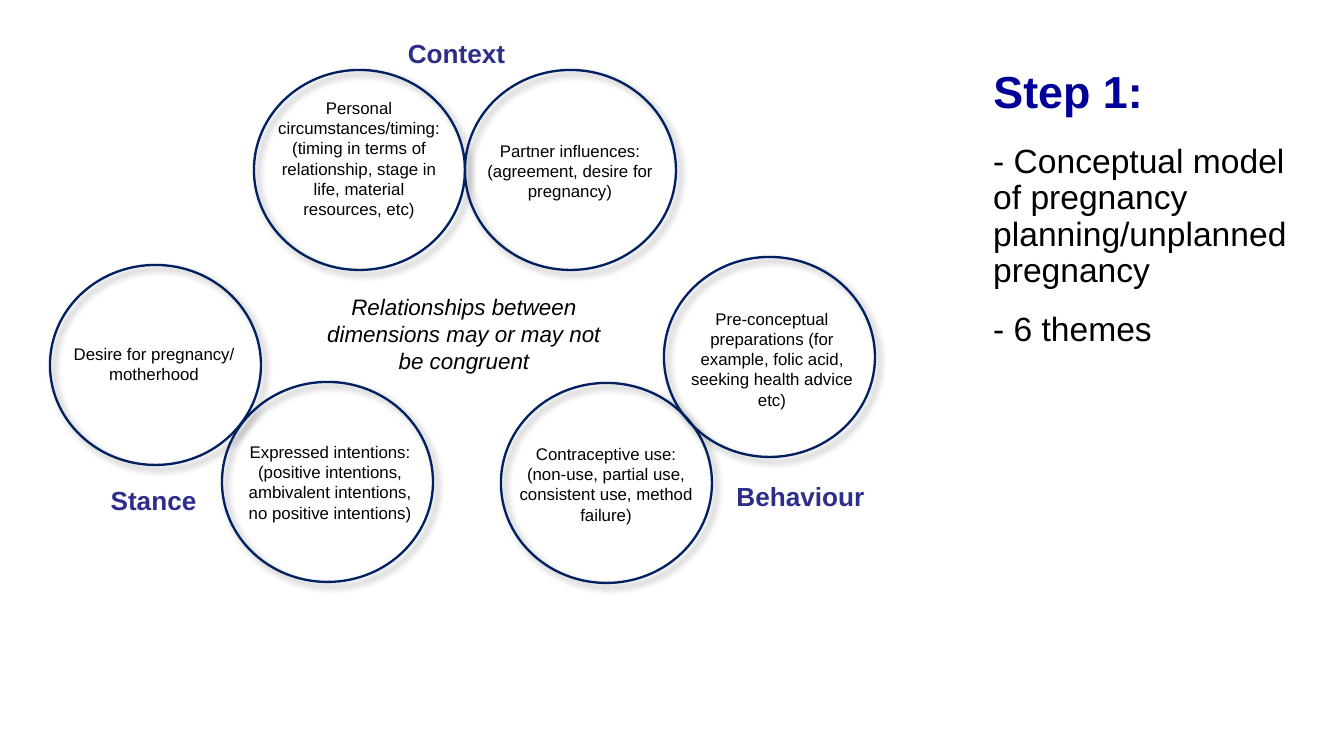
from lxml import etree
from pptx import Presentation
from pptx.dml.color import RGBColor
from pptx.enum.shapes import MSO_SHAPE
from pptx.enum.text import MSO_ANCHOR, MSO_AUTO_SIZE, PP_ALIGN
from pptx.util import Pt

OVAL = MSO_SHAPE.OVAL
TOP = MSO_ANCHOR.TOP
FIXED = MSO_AUTO_SIZE.NONE
LEFT, MID = PP_ALIGN.LEFT, PP_ALIGN.CENTER
SCALE = 914400 / 134.4
COLORS = {"title": "000099", "label": "2D2D8A", "ring": "002060", "text": "000000"}
NS = "http://schemas.openxmlformats.org/drawingml/2006/main"
SHADOW = f"""<a:effectLst xmlns:a="{NS}">
<a:outerShdw blurRad="50800" dist="38100" dir="2700000" algn="tl" rotWithShape="0">
<a:srgbClr val="000000"><a:alpha val="40000"/></a:srgbClr>
</a:outerShdw></a:effectLst>"""


def px(*sizes):
    """Turn pixel lengths into EMU."""
    return [round(size * SCALE) for size in sizes]


class Board:
    """Holds the slide and its style, and adds each kind of element."""

    def __init__(self, deck):
        self.slide = deck.slides.add_slide(deck.slide_layouts[5])
        self.shapes = self.slide.shapes
        self.font = "Arial"

    def style(self, frame, lines, size, color, align, bold=False, italic=False):
        """Fill a text frame with styled paragraphs."""
        frame.word_wrap = True
        frame.auto_size = FIXED
        frame.vertical_anchor = TOP
        frame.text = "\n".join(lines)
        for para in frame.paragraphs:
            para.alignment = align
            font = para.font
            font.name, font.size = self.font, Pt(size)
            font.bold, font.italic = bold, italic
            font.color.rgb = RGBColor.from_string(COLORS[color])

    def title(self, box, text):
        """Place and style the slide title."""
        shape = self.shapes.title
        shape.left, shape.top, shape.width, shape.height = px(*box)
        self.style(shape.text_frame, [text], 24, "title", LEFT, bold=True)
        para = shape.text_frame.paragraphs[0]
        para.line_spacing, para.space_before = 0.9, Pt(0)

    def text(self, box, lines, size, color="text", align=MID, **looks):
        """Add a text box and return its frame."""
        frame = self.shapes.add_textbox(*px(*box)).text_frame
        self.style(frame, lines, size, color, align, **looks)
        return frame

    def notes(self, box, lines):
        """Add the spaced list beside the model."""
        for para in self.text(box, lines, 18, align=LEFT).paragraphs:
            para.line_spacing, para.space_after = 0.9, Pt(12)

    def ring(self, left, top):
        """Add an unfilled circle with a soft shadow."""
        shape = self.shapes.add_shape(OVAL, *px(left, top, 211, 200))
        shape.fill.background()
        shape.line.color.rgb = RGBColor.from_string(COLORS["ring"])
        shape.line.width = Pt(1.25)
        shape._element.spPr.append(etree.fromstring(SHADOW))


RINGS = [(254, 70), (465, 70), (501, 383), (664, 257), (50, 265), (222, 382)]
LABELS = [("Context", 366, 31), ("Stance", 63, 478), ("Behaviour", 710, 474)]
THEMES = [
    ((259, 91, 200, 136), ["Personal circumstances/timing: (timing in terms of "
                           "relationship, stage in life, material resources, etc)"]),
    ((470, 134, 200, 75), ["Partner influences: (agreement, desire for pregnancy)"]),
    ((54, 337, 200, 54), ["Desire for pregnancy/", "motherhood"]),
    ((230, 435, 200, 95), ["Expressed intentions: (positive intentions, "
                           "ambivalent intentions, no positive intentions)"]),
    ((506, 437, 200, 95), ["Contraceptive use: (non-use, partial use, "
                           "consistent use, method failure)"]),
    ((664, 302, 216, 116), ["Pre-conceptual preparations (for example, "
                            "folic acid, seeking health advice etc)"]),
]


def main():
    """Build and save the slide."""
    deck = Presentation()
    deck.slide_width, deck.slide_height = px(1344, 756)
    board = Board(deck)
    board.title((980, 63, 340, 95), "Step 1:")
    board.notes((980, 138, 352, 370), [
        "- Conceptual model of pregnancy planning/unplanned pregnancy", "- 6 themes"])
    for spot in RINGS:
        board.ring(*spot)
    for name, left, top in LABELS:
        board.text((left, top, 181, 46), [name], 14, "label", bold=True)
    board.text((300, 287, 328, 95), [
        "Relationships between dimensions may or may not be congruent"], 12, italic=True)
    for box, lines in THEMES:
        board.text(box, lines, 9)
    deck.save("out.pptx")


if __name__ == "__main__":
    main()
